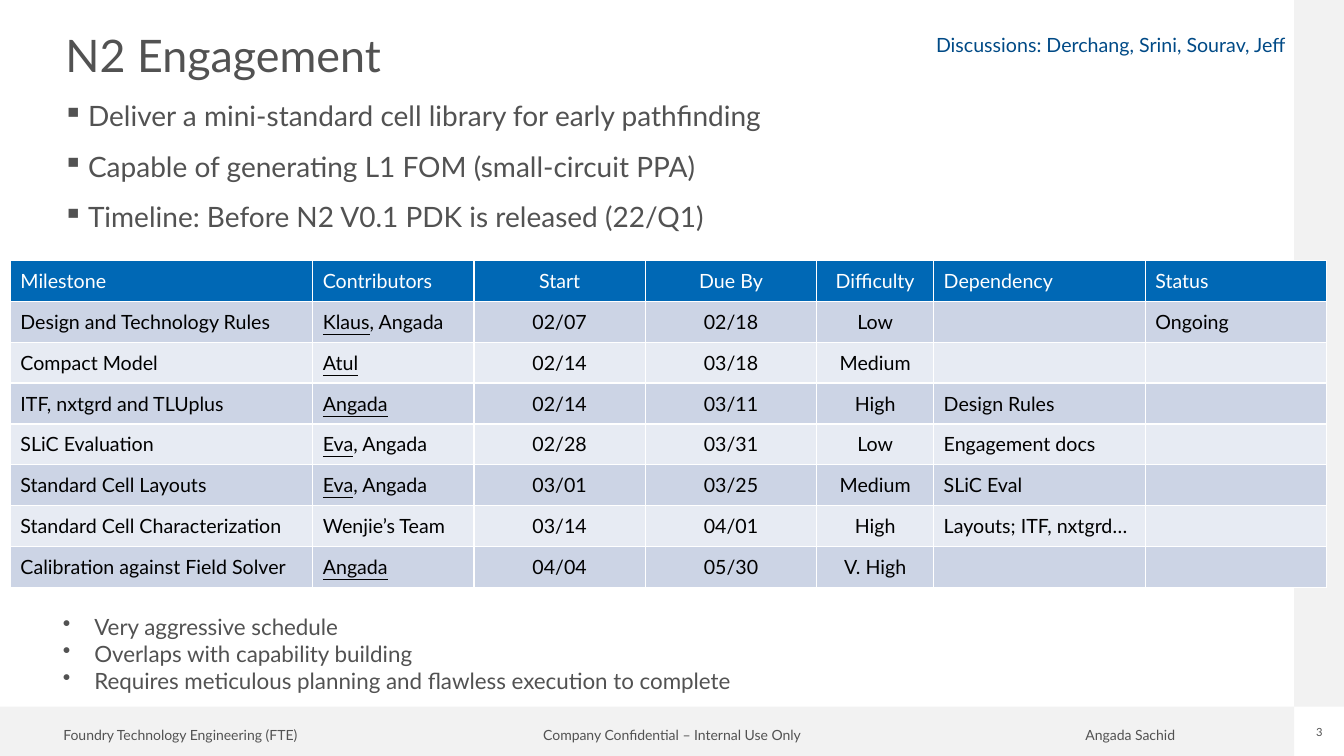
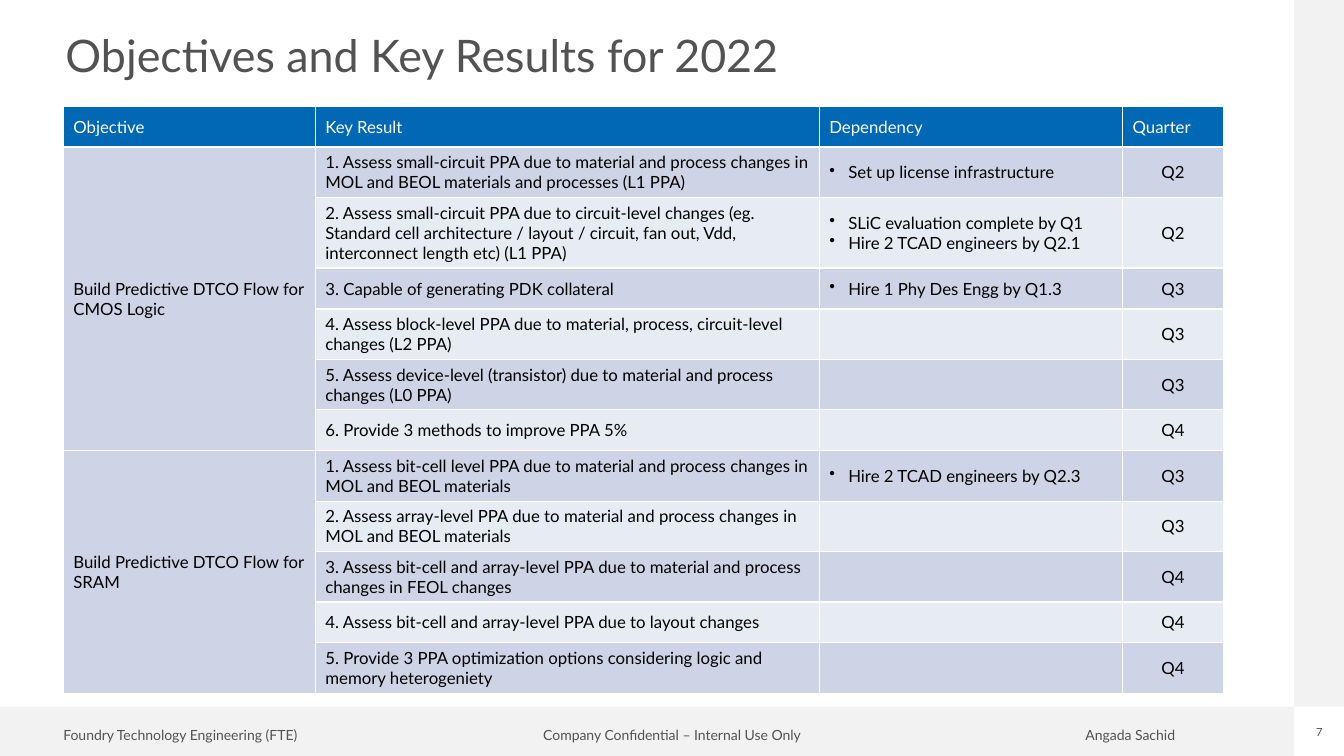
"""Build the N2 engagement plan and the 2022 objectives slides."""
from lxml.etree import SubElement
from pptx import Presentation
from pptx.dml.color import RGBColor
from pptx.enum.shapes import MSO_SHAPE
from pptx.enum.text import MSO_ANCHOR, PP_ALIGN
from pptx.oxml.ns import qn
from pptx.util import Pt

FONT = "Lato"
COLORS = {
    "text": "525252", "band": "F2F2F2", "note": "004A86", "header": "0068B5",
    "odd": "CCD4E5", "even": "E7EBF3", "white": "FFFFFF", "black": "000000",
}
ALIGN = {"l": PP_ALIGN.LEFT, "c": PP_ALIGN.CENTER, "r": PP_ALIGN.RIGHT}
SLIDE_WIDTH, SLIDE_HEIGHT = 960, 540
BAND_LEFT, BAND_TOP = 924.5, 504.7
ROW_HEIGHT = 29.2

GOALS = [
    "Deliver a mini-standard cell library for early pathfinding",
    "Capable of generating L1 FOM (small-circuit PPA)",
    "Timeline: Before N2 V0.1 PDK is released (22/Q1)",
]
RISKS = [
    "Very aggressive schedule",
    "Overlaps with capability building",
    "Requires meticulous planning and flawless execution to complete",
]
MILESTONES = [
    ["Milestone", "Contributors", "Start", "Due By", "Difficulty", "Dependency", "Status"],
    ["Design and Technology Rules", "_Klaus_, Angada", "02/07", "02/18", "Low", "", "Ongoing"],
    ["Compact Model", "_Atul_", "02/14", "03/18", "Medium", "", ""],
    ["ITF, nxtgrd and TLUplus", "_Angada_", "02/14", "03/11", "High", "Design Rules", ""],
    ["SLiC Evaluation", "_Eva_, Angada", "02/28", "03/31", "Low", "Engagement docs", ""],
    ["Standard Cell Layouts", "_Eva_, Angada", "03/01", "03/25", "Medium", "SLiC Eval", ""],
    ["Standard Cell Characterization", "Wenjie’s Team", "03/14", "04/01", "High",
     "Layouts; ITF, nxtgrd…", ""],
    ["Calibration against Field Solver", "_Angada_", "04/04", "05/30", "V. High", "", ""],
]
OBJECTIVES = {
    "Build Predictive DTCO Flow for CMOS Logic": [
        ("1. Assess small-circuit PPA due to material and process changes in MOL and BEOL "
         "materials and processes (L1 PPA)", "Set up license infrastructure", "Q2"),
        ("2. Assess small-circuit PPA due to circuit-level changes (eg. Standard cell "
         "architecture / layout / circuit, fan out, Vdd, interconnect length etc) (L1 PPA)",
         "SLiC evaluation complete by Q1\nHire 2 TCAD engineers by Q2.1", "Q2"),
        ("3. Capable of generating PDK collateral", "Hire 1 Phy Des Engg by Q1.3", "Q3"),
        ("4. Assess block-level PPA due to material, process, circuit-level changes (L2 PPA)",
         "", "Q3"),
        ("5. Assess device-level (transistor) due to material and process changes (L0 PPA)",
         "", "Q3"),
        ("6. Provide 3 methods to improve PPA 5%", "", "Q4"),
    ],
    "Build Predictive DTCO Flow for SRAM": [
        ("1. Assess bit-cell level PPA due to material and process changes in MOL and BEOL "
         "materials", "Hire 2 TCAD engineers by Q2.3", "Q3"),
        ("2. Assess array-level PPA due to material and process changes in MOL and BEOL "
         "materials", "", "Q3"),
        ("3. Assess bit-cell and array-level PPA due to material and process changes in FEOL "
         "changes", "", "Q4"),
        ("4. Assess bit-cell and array-level PPA due to layout changes", "", "Q4"),
        ("5. Provide 3 PPA optimization options considering logic and memory heterogeniety",
         "", "Q4"),
    ],
}
RESULT_LINES = [1, 2, 3, 1, 2, 2, 1, 2, 2, 2, 1, 2]


def color(name):
    return RGBColor.from_string(COLORS[name])


def write(frame, text, size=12, tone="text", align="l", spacing=1.0, gap=0,
          bullet=None, indent=0):
    for index, line in enumerate(text.split("\n")):
        paragraph = frame.add_paragraph() if index else frame.paragraphs[0]
        paragraph.alignment = ALIGN[align]
        paragraph.line_spacing = spacing
        paragraph.space_before = Pt(gap if index else 0)
        if bullet and line:
            properties = paragraph._p.get_or_add_pPr()
            properties.set("marL", str(Pt(indent)))
            properties.set("indent", str(-Pt(indent)))
            SubElement(properties, qn("a:buChar")).set("char", bullet)
        for part, words in enumerate(line.split("_")):
            if words:
                run = paragraph.add_run()
                run.text = words
                run.font.name = FONT
                run.font.size = Pt(size)
                run.font.bold = False
                run.font.underline = part % 2 == 1
                run.font.color.rgb = color(tone)


def add_text(slide, text, left, top, width, height, anchor=MSO_ANCHOR.TOP, **style):
    frame = slide.shapes.add_textbox(Pt(left), Pt(top), Pt(width), Pt(height)).text_frame
    frame.word_wrap = True
    frame.vertical_anchor = anchor
    frame.margin_left = frame.margin_right = frame.margin_top = frame.margin_bottom = 0
    write(frame, text, **style)


def add_band(slide, left, top, width, height):
    band = slide.shapes.add_shape(MSO_SHAPE.RECTANGLE, Pt(left), Pt(top), Pt(width), Pt(height))
    band.shadow.inherit = False
    band.fill.solid()
    band.fill.fore_color.rgb = color("band")
    band.line.fill.background()


def add_page(deck, title, number):
    slide = deck.slides.add_slide(deck.slide_layouts[6])
    add_band(slide, 0, BAND_TOP, BAND_LEFT, SLIDE_HEIGHT - BAND_TOP)
    add_band(slide, BAND_LEFT, 0, SLIDE_WIDTH - BAND_LEFT, BAND_TOP)
    for text, left, width, align in [
        ("Foundry Technology Engineering (FTE)", 45.2, 184, "l"),
        ("Company Confidential – Internal Use Only", 380, 200, "c"),
        ("Angada Sachid", 775.3, 80, "l"),
    ]:
        add_text(slide, text, left, 520.6, width, 10.8, size=10, align=align, spacing=0.9)
    add_text(slide, str(number), 937.5, 518.4, 10, 9.6, size=8, align="c")
    add_text(slide, title, 46.8, 18, 867, 46.8, MSO_ANCHOR.MIDDLE, size=32, spacing=0.9)
    return slide


def add_borders(cell):
    properties = cell._tc.get_or_add_tcPr()
    for side in ("lnL", "lnR", "lnT", "lnB"):
        border = SubElement(properties, qn(f"a:{side}"))
        border.set("w", str(Pt(1)))
        fill = SubElement(border, qn("a:solidFill"))
        SubElement(fill, qn("a:srgbClr")).set("val", COLORS["white"])


def add_grid(slide, rows, left, top, widths, heights, aligns, size, bullet_column=None):
    grid = slide.shapes.add_table(len(rows), len(widths), Pt(left), Pt(top),
                                  Pt(sum(widths)), Pt(sum(heights))).table
    grid.first_row = grid.horz_banding = False
    for column, width in zip(grid.columns, widths):
        column.width = Pt(width)
    for r, (values, height) in enumerate(zip(rows, heights)):
        grid.rows[r].height = Pt(height)
        shade = "header" if r == 0 else "odd" if r % 2 else "even"
        for c, value in enumerate(values):
            cell = grid.cell(r, c)
            cell.vertical_anchor = MSO_ANCHOR.MIDDLE
            add_borders(cell)
            cell.fill.solid()
            cell.fill.fore_color.rgb = color(shade)
            write(cell.text_frame, value, size=size, tone="black" if r else "white",
                  align=aligns[c],
                  bullet="•" if r and c == bullet_column else None, indent=13.5)
    return grid


def add_engagement(deck):
    slide = add_page(deck, "N2 Engagement", 3)
    add_text(slide, "\n".join(GOALS), 44.9, 70.6, 867, 107, size=20, gap=12,
             bullet="▪", indent=18)
    add_grid(slide, MILESTONES, 7.4, 186, [216, 115.2, 122.4, 122.4, 83.5, 151.2, 129.6],
             [ROW_HEIGHT] * len(MILESTONES), "llcccll", 14)
    add_text(slide, "\n".join(RISKS), 44.9, 438, 867, 58, size=16, bullet="•", indent=22.5)
    add_text(slide, "Discussions: Derchang, Srini, Sourav, Jeff", 603.4, 23.4, 315, 17,
             size=14, tone="note", align="r")


def add_objectives(deck):
    slide = add_page(deck, "Objectives and Key Results for 2022", 7)
    rows = [["Objective", "Key Result", "Dependency", "Quarter"]]
    spans = []
    for objective, results in OBJECTIVES.items():
        spans.append((len(rows), len(rows) + len(results) - 1))
        for index, result in enumerate(results):
            rows.append(["" if index else objective, *result])
    heights = [max(ROW_HEIGHT, 7.2 + 14.4 * lines) for lines in RESULT_LINES]
    grid = add_grid(slide, rows, 45.2, 75.8, [180, 360, 216.7, 72], heights, "lllc", 12,
                    bullet_column=2)
    grid.cell(0, 3).text_frame.paragraphs[0].alignment = ALIGN["l"]
    for first, last in spans:
        objective = grid.cell(first, 0)
        objective.merge(grid.cell(last, 0))
        objective.fill.fore_color.rgb = color("odd")


def main():
    deck = Presentation()
    deck.slide_width, deck.slide_height = Pt(SLIDE_WIDTH), Pt(SLIDE_HEIGHT)
    add_engagement(deck)
    add_objectives(deck)
    deck.save("out.pptx")


if __name__ == "__main__":
    main()
